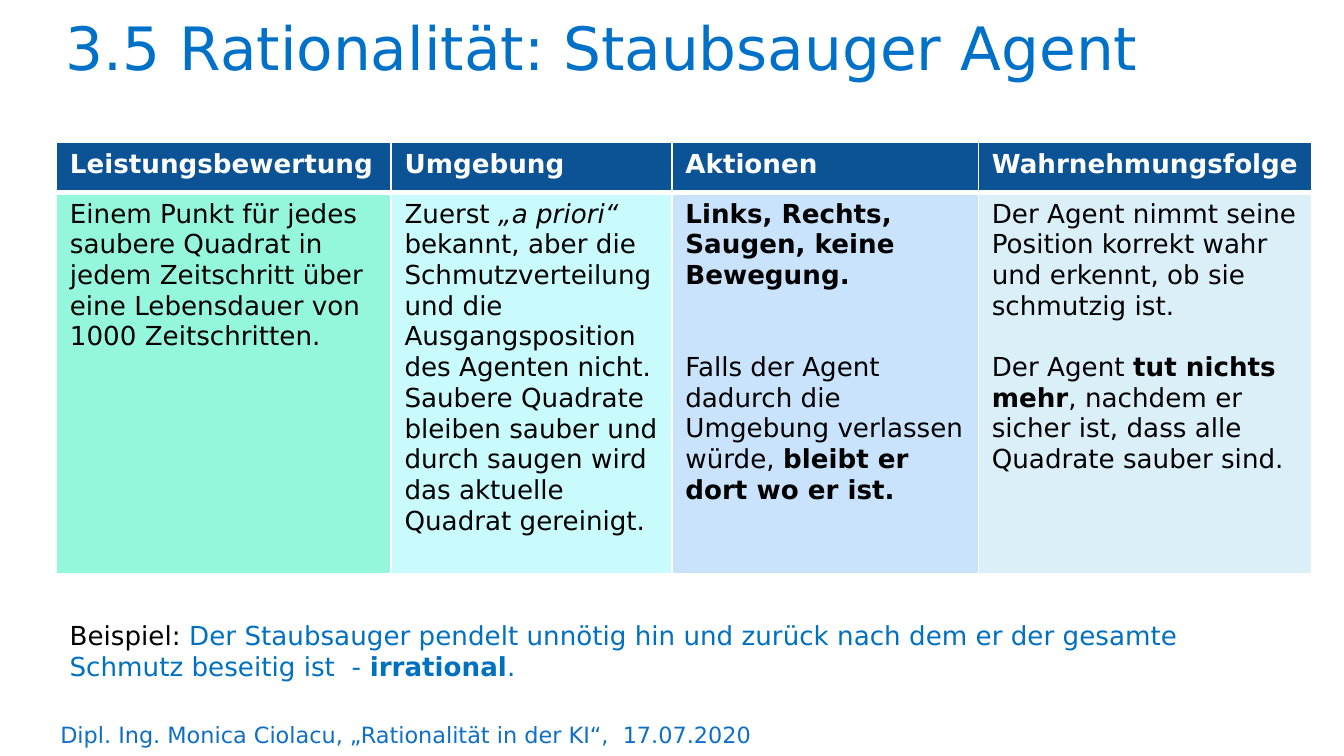
from lxml.etree import SubElement
from pptx import Presentation
from pptx.dml.color import RGBColor
from pptx.oxml.ns import qn
from pptx.util import Inches, Pt

FONT = "DejaVu Sans"
BLACK = RGBColor(0x00, 0x00, 0x00)
WHITE = RGBColor(0xFF, 0xFF, 0xFF)
NAVY = RGBColor(0x0B, 0x53, 0x94)
TITLE_BLUE = RGBColor(0x00, 0x71, 0xC8)
EXAMPLE_BLUE = RGBColor(0x00, 0x70, 0xC0)
FOOTER_BLUE = RGBColor(0x0F, 0x6F, 0xC6)
MINT = RGBColor(0x94, 0xF7, 0xDC)
AQUA = RGBColor(0xC9, 0xFA, 0xFC)
SKY = RGBColor(0xC8, 0xE3, 0xFB)
ICE = RGBColor(0xDB, 0xEF, 0xF9)

LEFT = 0.42
WIDTH = 9.34
ROW_HEIGHTS = (0.37, 2.84)
LINE_HEIGHT = 16.4

TITLE = "3.5 Rationalität: Staubsauger Agent"
FOOTER = "Dipl. Ing. Monica Ciolacu, „Rationalität in der KI“,  17.07.2020"
EXAMPLE = [
    ("Beispiel: ", {"color": BLACK}),
    ("Der Staubsauger pendelt unnötig hin und zurück nach dem er der gesamte "
     "Schmutz beseitig ist  - ", {}),
    ("irrational", {"bold": True}),
    (".", {}),
]

COLUMNS = [
    ("Leistungsbewertung", 2.49, MINT, 0, [
        [("Einem Punkt für jedes saubere Quadrat in jedem Zeitschritt über eine "
          "Lebensdauer von 1000 Zeitschritten.", {})],
    ]),
    ("Umgebung", 2.09, AQUA, 0, [
        [("Zuerst ", {}),
         ("„a priori“ ", {"italic": True}),
         ("bekannt, aber die Schmutzverteilung und die Ausgangsposition des "
          "Agenten nicht.", {})],
        [("Saubere Quadrate bleiben sauber und durch saugen wird das aktuelle "
          "Quadrat gereinigt.", {})],
    ]),
    ("Aktionen", 2.28, SKY, 2, [
        [("Links, Rechts, Saugen, keine Bewegung.", {"bold": True})],
        [("Falls der Agent dadurch die Umgebung verlassen würde, ", {}),
         ("bleibt er dort wo er ist.", {"bold": True})],
    ]),
    ("Wahrnehmungsfolge", 2.48, ICE, 1, [
        [("Der Agent nimmt seine Position korrekt wahr und erkennt, ob sie "
          "schmutzig ist.", {})],
        [("Der Agent ", {}),
         ("tut nichts mehr", {"bold": True}),
         (", nachdem er sicher ist, dass alle Quadrate sauber sind.", {})],
    ]),
]


def write(frame, paragraphs, size, color, bold=False, gap=0):
    for index, spans in enumerate(paragraphs):
        para = frame.add_paragraph() if index else frame.paragraphs[0]
        para.font.name = FONT
        para.font.size = Pt(size)
        para.font.color.rgb = color
        para.font.bold = bold
        if index:
            para.space_before = Pt(gap)
        for text, style in spans:
            span = para.add_run()
            span.text = text
            if "color" in style:
                span.font.color.rgb = style["color"]
            if "bold" in style:
                span.font.bold = style["bold"]
            if "italic" in style:
                span.font.italic = style["italic"]


def add_text(page, area, spans, size, color):
    box = page.shapes.add_textbox(*map(Inches, area))
    box.text_frame.word_wrap = True
    write(box.text_frame, [spans], size, color)
    return box.text_frame


def style_cell(cell, fill, top, bottom):
    properties = cell._tc.get_or_add_tcPr()
    for side, width in (("L", 1), ("R", 1), ("T", top), ("B", bottom)):
        line = SubElement(properties, qn(f"a:ln{side}"), w=str(Pt(width)))
        SubElement(SubElement(line, qn("a:solidFill")), qn("a:srgbClr"), val=str(WHITE))
    cell.fill.solid()
    cell.fill.fore_color.rgb = fill


deck = Presentation()
deck.slide_width = Inches(10)
deck.slide_height = deck.slide_width * 9 // 16
page = deck.slides.add_slide(deck.slide_layouts[6])

add_text(page, (0.35, 5.32, 6.15, 0.3), [(FOOTER, {})], 12, FOOTER_BLUE)

title = add_text(page, (LEFT, 0.1, 9.01, 0.69), [(TITLE, {})], 32, TITLE_BLUE)
title.margin_left = title.margin_right = Inches(0.07)
title.margin_top = title.margin_bottom = Inches(0.04)
title.paragraphs[0].line_spacing = 0.9

table = page.shapes.add_table(
    len(ROW_HEIGHTS), len(COLUMNS),
    Inches(LEFT), Inches(1.06), Inches(WIDTH), Inches(sum(ROW_HEIGHTS)),
).table
for row, height in zip(table.rows, ROW_HEIGHTS):
    row.height = Inches(height)
for index, (heading, width, fill, blank_lines, paragraphs) in enumerate(COLUMNS):
    table.columns[index].width = Inches(width)
    head, body = table.cell(0, index), table.cell(1, index)
    style_cell(head, NAVY, 1, 3)
    style_cell(body, fill, 3, 1)
    write(head.text_frame, [[(heading, {})]], 14, WHITE, bold=True)
    write(body.text_frame, paragraphs, 14, BLACK, gap=blank_lines * LINE_HEIGHT)

add_text(page, (LEFT, 4.56, WIDTH, 0.57), EXAMPLE, 14, EXAMPLE_BLUE)

deck.save("out.pptx")
